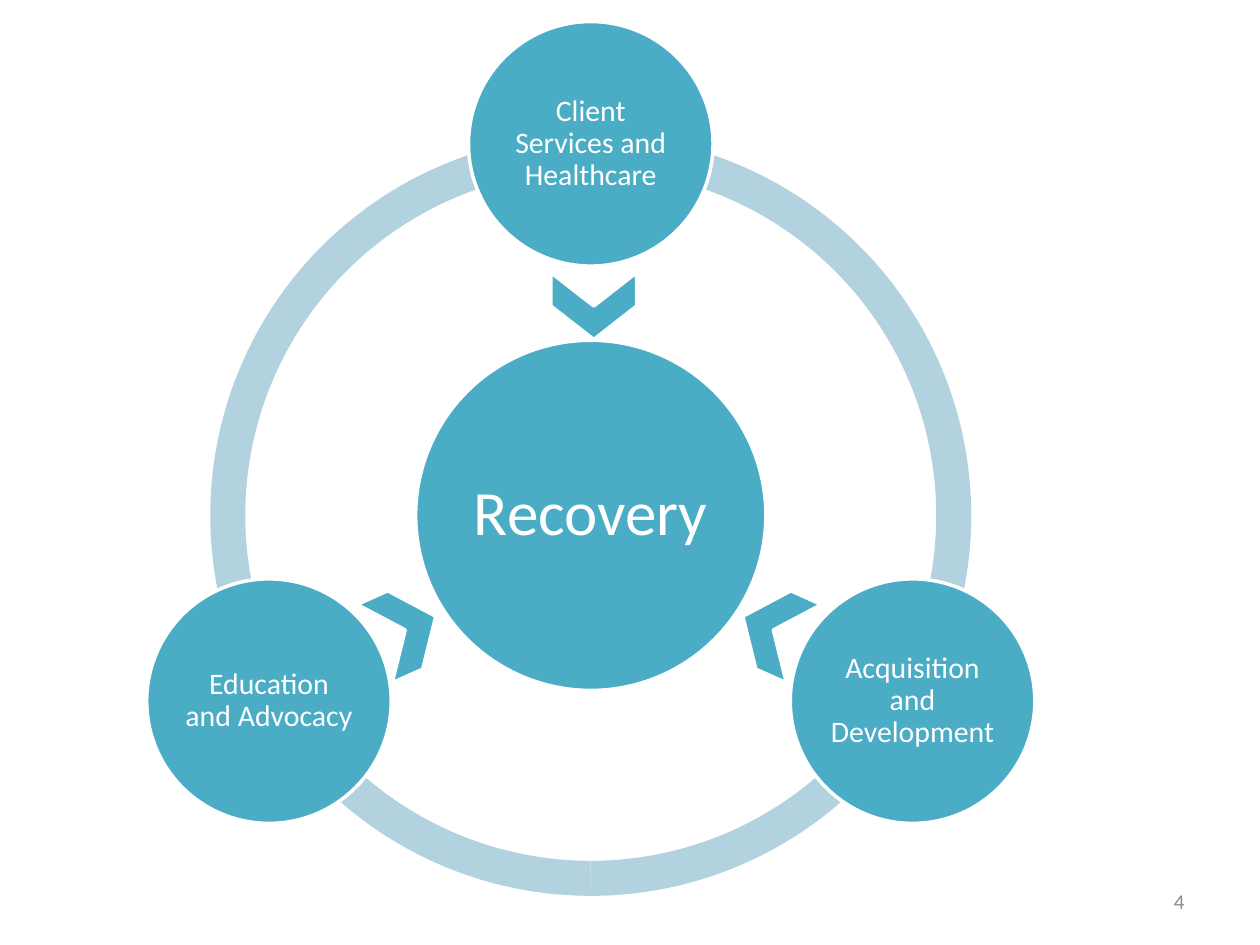
"""Build the recovery cycle slide."""
from dataclasses import dataclass
from math import cos, radians, sin

from pptx import Presentation
from pptx.dml.color import RGBColor
from pptx.enum.shapes import MSO_SHAPE
from pptx.enum.text import MSO_ANCHOR, PP_ALIGN
from pptx.util import Cm, Pt

WHITE = RGBColor(0xFF, 0xFF, 0xFF)
TEAL = RGBColor(0x4B, 0xAC, 0xC6)
PALE_TEAL = RGBColor(0xB2, 0xD2, 0xDF)
GREY = RGBColor(0x8C, 0x8C, 0x8C)
FONT = "Calibri"

CORE_SIZE = 7.06
SATELLITE_SIZE = 4.93
ORBIT_RADIUS = 7.49
RING_THICKNESS = 0.046
ARCS = [(90, 162), (18, 90), (162, 18)]
SATELLITES = [
    ("Client Services and Healthcare", -90),
    ("Acquisition and Development", 30),
    ("Education and Advocacy", 150),
]
CHEVRONS = [(0.06, -4.22, 90), (3.68, 2.31, 204.1), (-3.74, 2.31, 335.9)]


@dataclass
class Box:
    """A rectangle in centimetres."""

    left: float
    top: float
    width: float
    height: float

    def centred(self, right, down, width, height):
        """Return a box whose centre is offset from the centre of this one."""
        return Box(
            self.left + (self.width - width) / 2 + right,
            self.top + (self.height - height) / 2 + down,
            width,
            height,
        )

    def lengths(self):
        """Return left, top, width and height as slide lengths."""
        return [Cm(v) for v in (self.left, self.top, self.width, self.height)]


def write_text(shape, text, size, colour=WHITE, align=PP_ALIGN.CENTER,
               spacing=None, inset=None):
    """Fill a shape with one formatted, vertically centred paragraph."""
    frame = shape.text_frame
    frame.word_wrap = True
    frame.vertical_anchor = MSO_ANCHOR.MIDDLE
    if inset is not None:
        frame.margin_left = frame.margin_right = Cm(inset)
        frame.margin_top = frame.margin_bottom = Cm(inset)
    para = frame.paragraphs[0]
    para.alignment = align
    para.line_spacing = spacing
    span = para.add_run()
    span.text = text
    span.font.name = FONT
    span.font.size = Pt(size)
    span.font.color.rgb = colour


def add_filled(page, kind, box, fill=TEAL, outlined=True):
    """Add a flat preset shape, with a white outline if wanted."""
    shape = page.shapes.add_shape(kind, *box.lengths())
    shape.shadow.inherit = False
    shape.fill.solid()
    shape.fill.fore_color.rgb = fill
    if outlined:
        shape.line.color.rgb = WHITE
        shape.line.width = Pt(2)
    else:
        shape.line.fill.background()
    return shape


def add_circle(page, box, text, size, inset):
    """Add a labelled circle."""
    circle = add_filled(page, MSO_SHAPE.OVAL, box)
    write_text(circle, text, size, spacing=0.9, inset=inset)


def add_cycle(page, box):
    """Draw the ring in its box, with the core, satellites and chevrons."""
    for start, end in ARCS:
        arc = add_filled(page, MSO_SHAPE.BLOCK_ARC, box, PALE_TEAL, False)
        arc.adjustments[0] = start * 0.6
        arc.adjustments[1] = end * 0.6
        arc.adjustments[2] = RING_THICKNESS

    core = box.centred(0, 0, CORE_SIZE, CORE_SIZE)
    add_circle(page, core, "Recovery", 36, 0.13)

    for label, degrees in SATELLITES:
        angle = radians(degrees)
        satellite = box.centred(ORBIT_RADIUS * cos(angle), ORBIT_RADIUS * sin(angle),
                                SATELLITE_SIZE, SATELLITE_SIZE)
        add_circle(page, satellite, label, 17, 0.05)

    for right, down, rotation in CHEVRONS:
        place = box.centred(right, down, 1.35, 1.73)
        chevron = add_filled(page, MSO_SHAPE.CHEVRON, place)
        chevron.rotation = rotation


def add_page_number(page, box, number):
    """Add the page number, aligned right in its box."""
    holder = page.shapes.add_textbox(*box.lengths())
    write_text(holder, number, 12, GREY, PP_ALIGN.RIGHT)


def main():
    """Build and save the deck."""
    deck = Presentation()
    deck.slide_width = Cm(25.4)
    deck.slide_height = Cm(19.05)
    page = deck.slides.add_slide(deck.slide_layouts[6])
    add_page_number(page, Box(18.2, 17.66, 5.93, 1.01), "4")
    add_cycle(page, Box(4.24, 2.72, 15.34, 15.34))
    deck.save("out.pptx")


if __name__ == "__main__":
    main()
